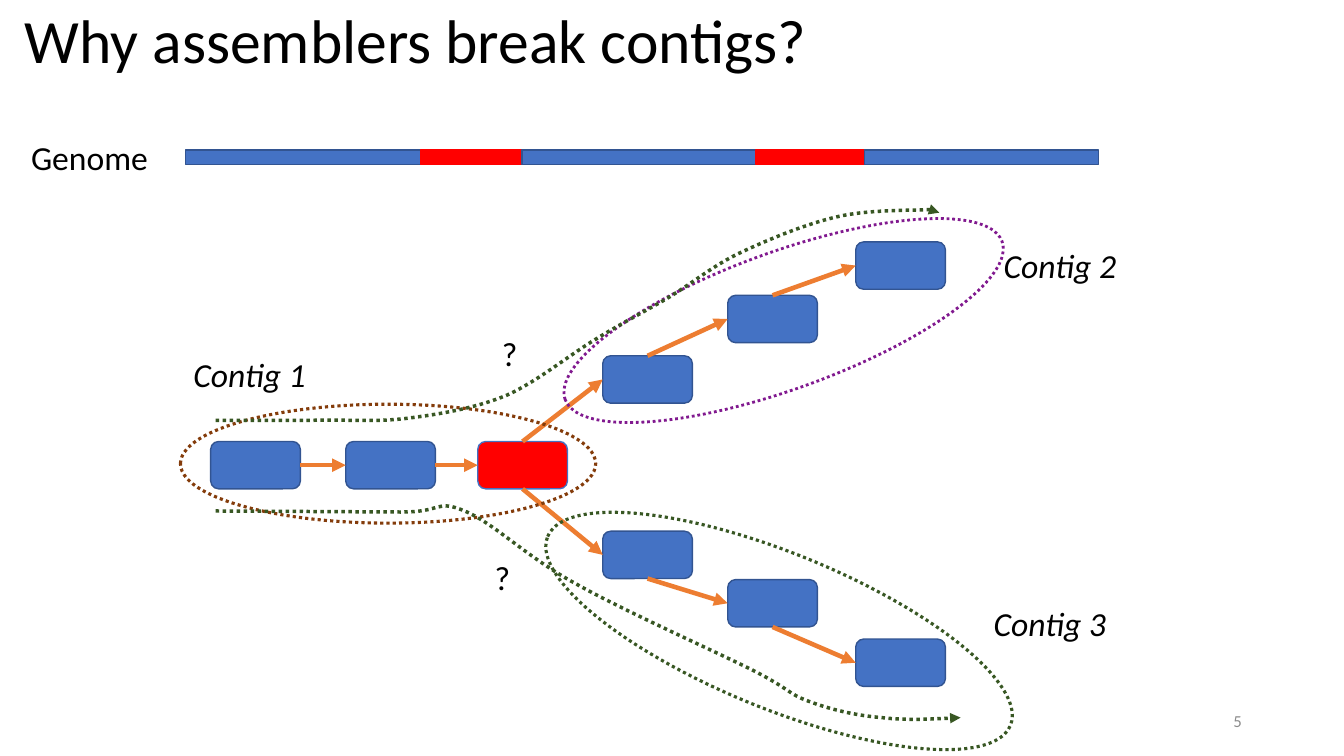
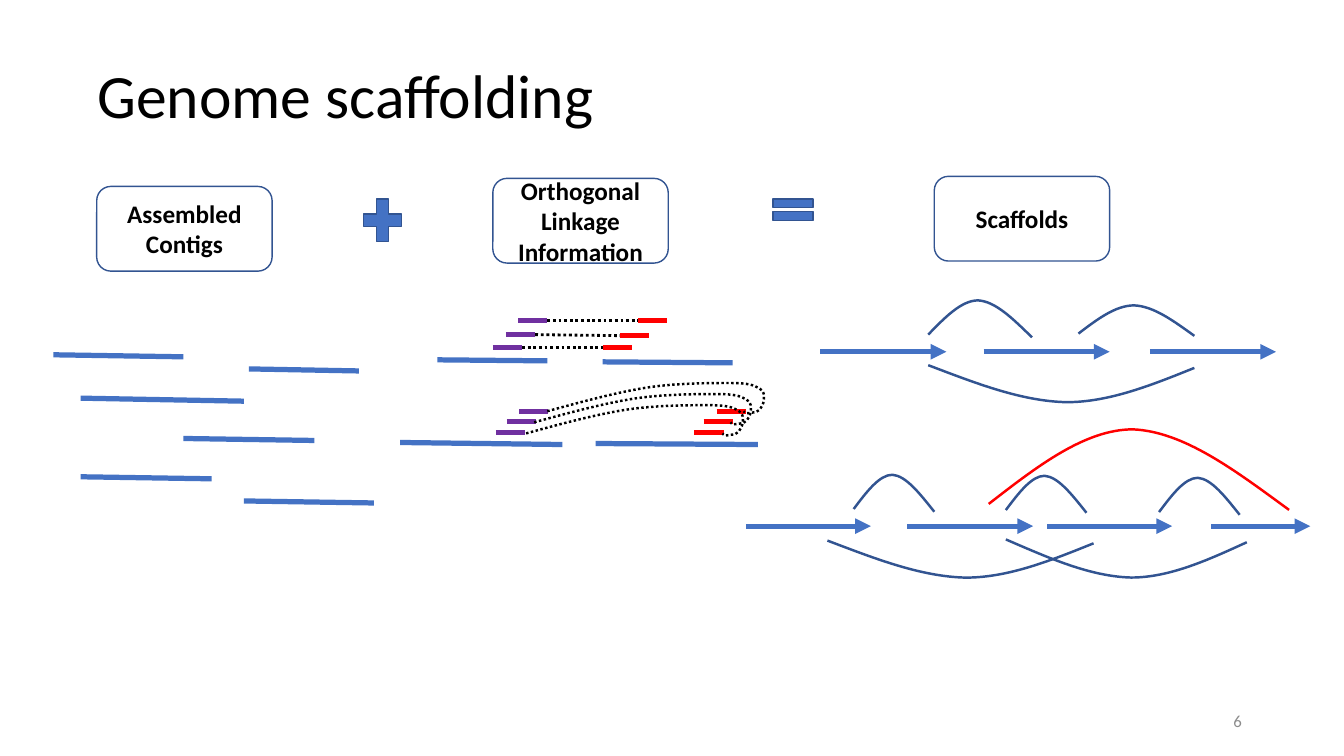
from dataclasses import dataclass
from itertools import cycle, pairwise

from lxml import etree
from pptx import Presentation
from pptx.dml.color import RGBColor
from pptx.enum.dml import MSO_LINE
from pptx.enum.shapes import MSO_CONNECTOR, MSO_SHAPE
from pptx.enum.text import MSO_ANCHOR, PP_ALIGN
from pptx.oxml.ns import qn
from pptx.util import Cm, Pt

# Enum members
STRAIGHT = MSO_CONNECTOR.STRAIGHT
RECTANGLE, ROUNDED, ELLIPSE = MSO_SHAPE.RECTANGLE, MSO_SHAPE.ROUNDED_RECTANGLE, MSO_SHAPE.OVAL
PLUS, EQUAL = MSO_SHAPE.MATH_PLUS, MSO_SHAPE.MATH_EQUAL
DOTTED = MSO_LINE.ROUND_DOT
TOP, MIDDLE = MSO_ANCHOR.TOP, MSO_ANCHOR.MIDDLE
LEFT, CENTER, RIGHT = PP_ALIGN.LEFT, PP_ALIGN.CENTER, PP_ALIGN.RIGHT

# Shared look
FONT = "Calibri"
BLACK, GREY, BLUE, NAVY = "000000", "8C8C8C", "4472C4", "325491"
RED, ORANGE, PURPLE, GREEN = "FF0000", "ED7D31", "7030A0", "385723"
BROWN, VIOLET = "843C0B", "81198F"
TITLE_FONT = {"size": Pt(44)}
LABEL_FONT = {"size": Pt(24)}
CONTIG_FONT = {"size": Pt(24), "italic": True}
HEADING_FONT = {"size": Pt(18), "bold": True}
NUMBER_FONT = {"size": Pt(12)}

# Connection sites of a rectangle
SITE_TOP, SITE_LEFT, SITE_BOTTOM, SITE_RIGHT = range(4)

Point = tuple[float, float]


@dataclass(frozen=True)
class Box:
    left: float
    top: float
    width: float
    height: float


@dataclass(frozen=True)
class Stroke:
    color: str
    width: float
    dash: object = None
    arrow: bool = False


@dataclass(frozen=True)
class Edge:
    source: str
    source_site: int
    target: str


OUTLINE = Stroke(NAVY, 1)
CONTIG = Stroke(BLUE, 3.75)
CONTIG_ARROW = Stroke(BLUE, 3.75, arrow=True)
EDGE = Stroke(ORANGE, 3.25, arrow=True)
WALK = Stroke(GREEN, 2.5, DOTTED, True)
LINK = Stroke(NAVY, 1.75)


def length(grid: float) -> Cm:
    """Turn a position on the 2.54 cm layout grid into a length."""
    return Cm(grid * 2.54)


def color(value: str) -> RGBColor:
    return RGBColor.from_string(value)


def apply(target, values: dict) -> None:
    for name, value in values.items():
        setattr(target, name, value)


def set_stroke(line, stroke: Stroke) -> None:
    line.color.rgb = color(stroke.color)
    line.width = Pt(stroke.width)
    if stroke.dash is not None:
        line.dash_style = stroke.dash
    if stroke.arrow:
        etree.SubElement(line._get_or_add_ln(), qn("a:tailEnd"), type="triangle")


def finish_shape(shape, stroke: Stroke, fill: str | None = None) -> None:
    shape.shadow.inherit = False
    if fill is None:
        shape.fill.background()
    else:
        shape.fill.solid()
        shape.fill.fore_color.rgb = color(fill)
    set_stroke(shape.line, stroke)


def write(shape, text: str, font: dict, alignment=LEFT, anchor=TOP,
          text_color: str = BLACK, spacing: float = 1.0) -> None:
    apply(shape.text_frame, {"word_wrap": True, "vertical_anchor": anchor})
    paragraph = shape.text_frame.paragraphs[0]
    apply(paragraph, {"alignment": alignment, "line_spacing": spacing})
    run = paragraph.add_run()
    run.text = text
    apply(run.font, {"name": FONT, **font})
    run.font.color.rgb = color(text_color)


def add_shape(slide, kind, box: Box, stroke: Stroke, fill: str | None = None,
              rotation: float = 0):
    shape = slide.shapes.add_shape(kind, length(box.left), length(box.top),
                                   length(box.width), length(box.height))
    shape.rotation = rotation
    finish_shape(shape, stroke, fill)
    return shape


def add_text(slide, box: Box, text: str, font: dict, **options) -> None:
    shape = slide.shapes.add_textbox(length(box.left), length(box.top),
                                     length(box.width), length(box.height))
    write(shape, text, font, **options)


def add_line(slide, start: Point, end: Point, stroke: Stroke):
    connector = slide.shapes.add_connector(STRAIGHT, *map(length, start + end))
    set_stroke(connector.line, stroke)
    etree.SubElement(connector._element.spPr, qn("a:effectLst"))
    return connector


def add_curve(slide, points: list[Point], stroke: Stroke, straight: int = 0) -> None:
    """Draw a start, some straight steps, then two controls and an end per curve."""
    start, *others = [(length(x), length(y)) for x, y in points]
    builder = slide.shapes.build_freeform(*start)
    builder.add_line_segments(others, close=False)
    shape = builder.convert_to_shape()
    outline = next(shape._element.iter(qn("a:path")))
    steps = outline.findall(qn("a:lnTo"))[straight:]
    for first in range(0, len(steps), 3):
        curve = etree.SubElement(outline, qn("a:cubicBezTo"))
        for step in steps[first:first + 3]:
            curve.append(step[0])
            outline.remove(step)
    finish_shape(shape, stroke)


def add_slide(presentation, title: str, left: float, top: float, number: int):
    slide = presentation.slides.add_slide(presentation.slide_layouts[6])
    add_text(slide, Box(left, top, 11.5, 1.45), title, TITLE_FONT, anchor=MIDDLE, spacing=0.9)
    add_text(slide, Box(9.42, 6.95, 3, 0.4), str(number), NUMBER_FONT,
             alignment=RIGHT, anchor=MIDDLE, text_color=GREY)
    return slide


# Slide: contig breaks
NODES = {
    "first": (2.09, 4.38), "second": (3.43, 4.38), "repeat": (4.74, 4.38),
    "upper 1": (5.98, 3.53), "lower 1": (5.98, 5.27), "upper 2": (7.22, 2.93),
    "lower 2": (7.22, 5.75), "upper 3": (8.49, 2.4), "lower 3": (8.49, 6.34),
}
EDGES = [
    Edge("first", SITE_RIGHT, "second"), Edge("second", SITE_RIGHT, "repeat"),
    Edge("repeat", SITE_TOP, "upper 1"), Edge("repeat", SITE_BOTTOM, "lower 1"),
    Edge("upper 1", SITE_TOP, "upper 2"), Edge("lower 1", SITE_BOTTOM, "lower 2"),
    Edge("upper 2", SITE_TOP, "upper 3"), Edge("lower 2", SITE_BOTTOM, "lower 3"),
]
CONTIG_RINGS = [
    (Box(1.79, 4.01, 4.12, 1.18), 0, Stroke(BROWN, 2.25, DOTTED)),
    (Box(5.47, 2.5, 4.61, 1.36), 340.1, Stroke(VIOLET, 2, DOTTED)),
    (Box(5.25, 5.49, 4.96, 1.54), 22.2, Stroke(GREEN, 2.25, DOTTED)),
]
GENOME_CUTS = [1.84, 4.17, 5.18, 7.5, 8.58, 10.9]
LABELS = [
    (Box(1.82, 3.46, 1.89, 0.5), "Contig 1", CONTIG_FONT),
    (Box(9.86, 2.38, 1.89, 0.5), "Contig 2", CONTIG_FONT),
    (Box(9.76, 5.93, 1.89, 0.5), "Contig 3", CONTIG_FONT),
    (Box(0.21, 1.31, 1.45, 0.5), "Genome", LABEL_FONT),
    (Box(4.88, 3.25, 0.88, 0.5), "?", LABEL_FONT),
    (Box(4.81, 5.48, 0.88, 0.5), "?", LABEL_FONT),
]
UPPER_WALK = [
    (2.14, 4.17), (3.1, 4.17),
    (3.41, 4.16), (3.72, 4.19), (4.04, 4.15), (4.36, 4.11), (4.72, 4.05), (5.03, 3.92),
    (5.34, 3.78), (5.65, 3.52), (5.92, 3.36), (6.18, 3.2), (6.38, 3.1), (6.62, 2.96),
    (6.87, 2.81), (7.08, 2.63), (7.36, 2.5), (7.64, 2.37), (8, 2.22), (8.31, 2.15),
    (8.61, 2.08), (9.01, 2.09), (9.18, 2.08), (9.35, 2.08), (9.32, 2.11), (9.32, 2.11),
]
LOWER_WALK = [
    (2.14, 5.07), (3.99, 5.08),
    (4.4, 5.08), (4.32, 4.95), (4.61, 5.07), (4.9, 5.19), (5.23, 5.53), (5.71, 5.79),
    (6.19, 6.06), (7.09, 6.46), (7.47, 6.65), (7.86, 6.85), (7.81, 6.88), (8.03, 6.96),
    (8.24, 7.04), (8.5, 7.1), (8.75, 7.12), (9, 7.15), (9.53, 7.12), (9.53, 7.12),
]


def build_contig_breaks(presentation) -> None:
    slide = add_slide(presentation, "Why assemblers break contigs?", 0.15, -0.29, 5)
    # Assembly graph
    nodes = {}
    for name, (left, top) in NODES.items():
        fill, stroke = (RED, Stroke(BLUE, 1)) if name == "repeat" else (BLUE, OUTLINE)
        nodes[name] = add_shape(slide, ROUNDED, Box(left, top, 0.89, 0.47), stroke, fill)
    for edge in EDGES:
        connector = add_line(slide, NODES[edge.source], NODES[edge.target], EDGE)
        connector.begin_connect(nodes[edge.source], edge.source_site)
        connector.end_connect(nodes[edge.target], SITE_LEFT)
    for box, rotation, stroke in CONTIG_RINGS:
        add_shape(slide, ELLIPSE, box, stroke, rotation=rotation)
    # Genome bar with repeats in red
    looks = cycle([(BLUE, OUTLINE), (RED, Stroke(RED, 1))])
    for (left, right), (fill, stroke) in zip(pairwise(GENOME_CUTS), looks):
        add_shape(slide, RECTANGLE, Box(left, 1.49, right - left, 0.14), stroke, fill)
    # Possible walks and labels
    for walk in (UPPER_WALK, LOWER_WALK):
        add_curve(slide, walk, WALK, straight=1)
    for box, text, font in LABELS:
        add_text(slide, box, text, font)


# Slide: scaffolding
HEADINGS = [(0.96, 1.85, "Assembled Contigs"), (4.89, 1.77, "Orthogonal Linkage Information"),
            (9.27, 1.75, "Scaffolds")]
OPERATORS = [(PLUS, Box(3.54, 1.9, 0.51, 0.57)), (EQUAL, Box(7.6, 1.9, 0.54, 0.36))]
# Left, top, width and drop
CONTIGS = [
    (0.53, 3.52, 1.29, 0.02), (0.8, 3.95, 1.62, 0.03), (1.82, 4.35, 1.3, 0.02),
    (2.47, 3.66, 1.09, 0.02), (0.8, 4.73, 1.3, 0.02), (2.42, 4.97, 1.29, 0.02),
    (4.34, 3.57, 1.09, 0.01), (5.98, 3.59, 1.29, 0.01), (3.97, 4.39, 1.61, 0.02),
    (5.91, 4.4, 1.61, 0.01),
]
SCAFFOLD_ARROWS = [
    (8.14, 3.49, 1.25), (9.76, 3.49, 1.25), (11.41, 3.49, 1.25),
    (7.4, 5.22, 1.24), (9, 5.22, 1.25), (10.39, 5.22, 1.24), (12.02, 5.22, 0.98),
]
# Start, base, width and height; negative sizes turn the arch upside down
ARCH = [(0, 0), (0.16, -0.5), (0.32, -1), (0.48, -1), (0.65, -0.97), (0.82, -0.45), (1, 0.08)]
ARCHES = [
    (9.21, 3.32, 1.03, 0.34), (10.7, 3.31, 1.15, 0.28), (11.85, 3.65, -2.64, -0.34),
    (8.47, 5.05, 0.8, 0.34), (9.98, 5.06, 0.8, 0.34), (11.5, 5.08, 0.8, 0.34),
    (10.85, 5.39, -2.64, -0.34), (12.37, 5.38, -2.39, -0.35),
]
LONG_ARCH = (9.81, 5, 2.98, 0.74)
# Purple left and top, red left and top of each read pair
READ_WIDTH = 0.29
NEAR_PAIRS = [(5.14, 3.18, 6.33, 3.18), (5.02, 3.32, 6.15, 3.33), (4.89, 3.45, 5.98, 3.45)]
FAR_PAIRS = [(4.92, 4.29, 6.89, 4.29), (5.03, 4.18, 6.98, 4.18), (5.15, 4.08, 7.11, 4.08)]
HOOK = [
    (5.43, 4.08), (5.76, 3.99), (6.09, 3.9), (6.39, 3.85), (6.69, 3.8), (7.05, 3.8),
    (7.24, 3.8), (7.43, 3.8), (7.47, 3.82), (7.53, 3.85), (7.59, 3.88), (7.58, 3.93),
    (7.58, 3.96), (7.58, 3.99), (7.57, 4.01), (7.56, 4.03), (7.55, 4.05), (7.54, 4.06),
    (7.53, 4.07), (7.52, 4.08), (7.52, 4.08), (7.5, 4.09), (7.48, 4.09), (7.43, 4.1),
    (7.41, 4.1), (7.39, 4.1), (7.38, 4.08), (7.38, 4.08),
]
HOOK_SHIFTS = [(0, 0), (-0.13, 0.11), (-0.21, 0.22)]


def add_arch(slide, start: float, base: float, width: float, height: float,
             stroke: Stroke) -> None:
    add_curve(slide, [(start + x * width, base + y * height) for x, y in ARCH], stroke)


def build_scaffolding(presentation) -> None:
    slide = add_slide(presentation, "Genome scaffolding", 0.87, 0.25, 6)
    # Equation
    for left, top, text in HEADINGS:
        shape = add_shape(slide, ROUNDED, Box(left, top, 1.74, 0.84), OUTLINE)
        write(shape, text, HEADING_FONT, alignment=CENTER, anchor=MIDDLE)
    for kind, box in OPERATORS:
        add_shape(slide, kind, box, OUTLINE, BLUE)
    # Contigs and scaffolds
    for left, top, width, drop in CONTIGS:
        add_line(slide, (left, top), (left + width, top + drop), CONTIG)
    for left, top, width in SCAFFOLD_ARROWS:
        add_line(slide, (left, top), (left + width, top), CONTIG_ARROW)
    for arch in ARCHES:
        add_arch(slide, *arch, LINK)
    add_arch(slide, *LONG_ARCH, Stroke(RED, 1.75))
    # Read pairs and their links
    for purple, purple_top, red, red_top in NEAR_PAIRS + FAR_PAIRS:
        for left, top, shade in ((purple, purple_top, PURPLE), (red, red_top, RED)):
            add_line(slide, (left, top), (left + READ_WIDTH, top), Stroke(shade, 3.75))
    for purple, purple_top, red, red_top in NEAR_PAIRS:
        add_line(slide, (purple + READ_WIDTH, purple_top), (red, red_top),
                 Stroke(BLACK, 2, DOTTED))
    for across, down in HOOK_SHIFTS:
        add_curve(slide, [(x + across, y + down) for x, y in HOOK],
                  Stroke(BLACK, 1.75, DOTTED))


def main() -> None:
    presentation = Presentation()
    apply(presentation, {"slide_width": Cm(33.87), "slide_height": Cm(19.05)})
    build_contig_breaks(presentation)
    build_scaffolding(presentation)
    presentation.save("out.pptx")


if __name__ == "__main__":
    main()
